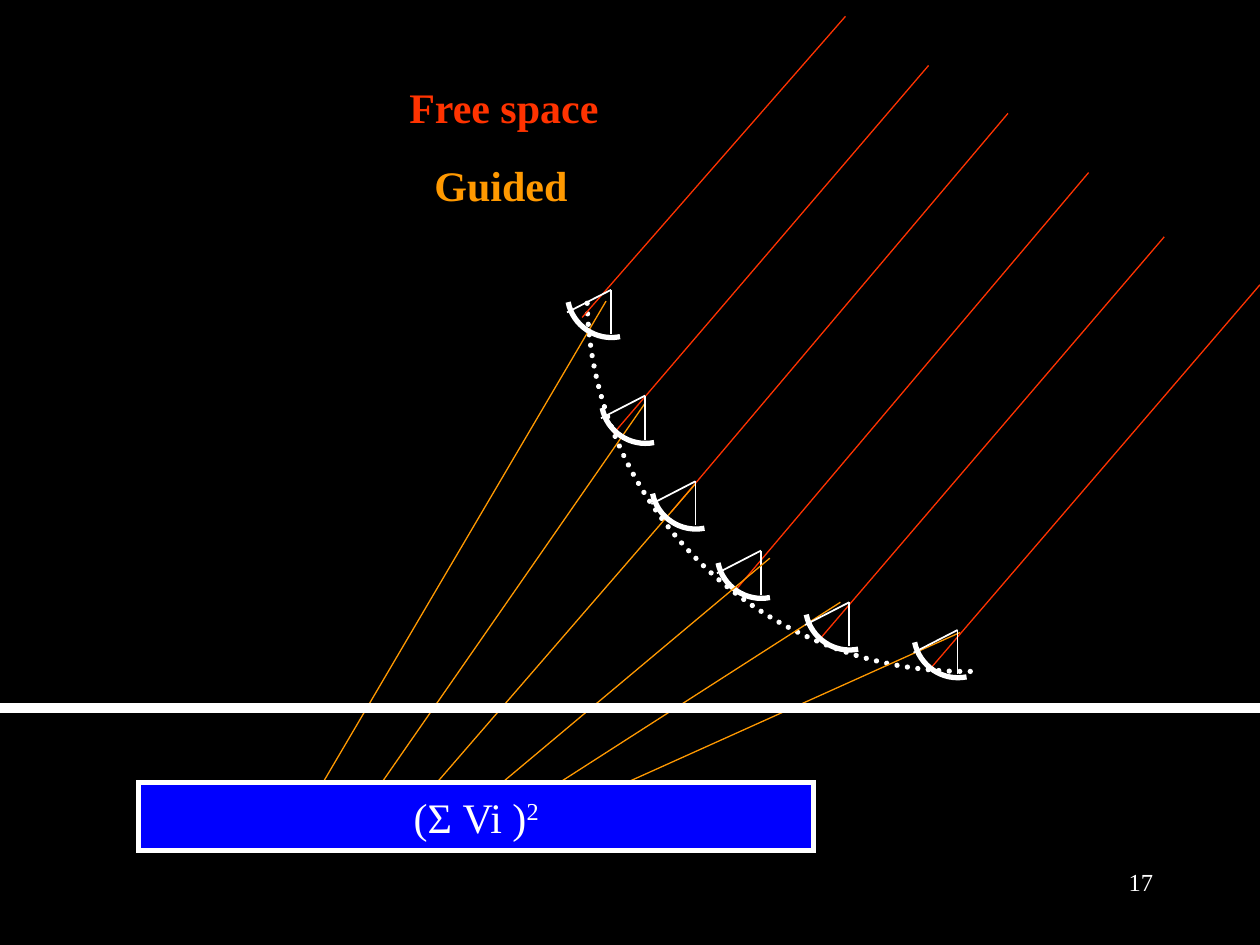
from lxml.etree import SubElement
from pptx import Presentation
from pptx.dml.color import RGBColor
from pptx.enum.dml import MSO_LINE_DASH_STYLE as Dash
from pptx.enum.shapes import MSO_CONNECTOR as Connector, MSO_SHAPE as Shape
from pptx.enum.text import MSO_ANCHOR as Anchor, PP_ALIGN as Align
from pptx.oxml.ns import qn
from pptx.util import Inches, Pt

# The slide is a grid of 10 columns by 7.5 rows, each one inch
COLUMNS, ROWS = 10, 7.5
CELL = Inches(1)
COLORS = {
    "background": "000000",
    "ink": "FFFFFF",
    "free": "FF3300",
    "guided": "FF9900",
    "detector": "0000FF",
}
FONT = "Times New Roman"
CURVE = 0.55  # handle length of a quarter circle, as a share of its radius

# Focus of each antenna: the one behind the guided rays, then those in front
BACK_FOCUS = (6.04, 4.37)
FRONT_FOCI = [(5.52, 3.82), (6.74, 4.78), (7.6, 5), (4.85, 2.3), (5.12, 3.14)]
FREE_RAYS = [((4.62, 2.52), (6.71, 0.13)), ((4.87, 3.44), (7.37, 0.52)),
             ((5.33, 4.06), (8, 0.9)), ((5.85, 4.67), (8.64, 1.37)),
             ((6.5, 5.08), (9.24, 1.88)), ((7.39, 5.3), (10, 2.26))]
GUIDED_RAYS = [((2.47, 6.37), (4.81, 2.39)), ((2.92, 6.37), (5.12, 3.2)),
               ((3.33, 6.37), (5.52, 3.84)), ((3.82, 6.35), (6.11, 4.43)),
               ((4.13, 6.41), (6.67, 4.78)), ((4.33, 6.5), (7.62, 5.02))]


def grid(*cells):
    return [round(cell * CELL) for cell in cells]


def rgb(name):
    return RGBColor.from_string(COLORS[name])


def set_line(line, color, width):
    line.color.rgb = rgb(color)
    line.width = Pt(width)


def add_line(shapes, start, end, color, width):
    link = shapes.add_connector(Connector.STRAIGHT, *grid(*start, *end))
    set_line(link.line, color, width)
    SubElement(link._element.spPr, qn("a:effectLst"))


def add_arc(shapes, box, rotation, from_top):
    """Quarter circle to the right side, from the box's top or bottom."""
    left, top, width, height = box
    start_y, end_y = (top, top + height) if from_top else (top + height, top)
    start, *curve = [
        grid(left, start_y),
        grid(left + width * CURVE, start_y),
        grid(left + width, end_y + (start_y - end_y) * CURVE),
        grid(left + width, end_y),
    ]
    outline = shapes.build_freeform(*start)
    outline.add_line_segments(curve, close=False)
    arc = outline.convert_to_shape()
    # Join the three segments into one Bézier curve
    segments = list(arc._element.iter(qn("a:lnTo")))
    bezier = SubElement(segments[0].getparent(), qn("a:cubicBezTo"))
    for segment in segments:
        bezier.append(segment[0])
        segment.getparent().remove(segment)
    arc.rotation = rotation
    arc.shadow.inherit = False
    arc.fill.background()
    set_line(arc.line, "ink", 3)
    return arc


def write(frame, runs, color, align=Align.LEFT, **font_format):
    paragraph = frame.paragraphs[0]
    paragraph.alignment = align
    for text, baseline in runs:
        run = paragraph.add_run()
        run.text = text
        run.font.color.rgb = rgb(color)
        for name, value in {"name": FONT, **font_format}.items():
            setattr(run.font, name, value)
        if baseline:
            run.font._element.set("baseline", str(baseline * 1000))


def add_label(shapes, box, text, color, wrap=False, **text_format):
    frame = shapes.add_textbox(*grid(*box)).text_frame
    frame.word_wrap = wrap
    write(frame, [(text, 0)], color, **text_format)


def add_rays(shapes, rays, color):
    for start, end in rays:
        add_line(shapes, start, end, color, 0.75)


def add_dish(slide, box):
    dish = add_arc(slide.shapes, box, 179.2, from_top=True)
    dish.line.dash_style = Dash.ROUND_DOT
    dish.line._get_or_add_ln().set("cap", "rnd")


def add_antenna(slide, focus):
    x, y = focus
    antenna = slide.shapes.add_group_shape().shapes
    add_arc(antenna, (x - 0.31, y + 0.06, 0.35, 0.35), 78.7, from_top=False)
    for edge in ((x - 0.35, y + 0.18), (x, y + 0.35)):
        add_line(antenna, focus, edge, "ink", 1)


def add_detector(slide, box):
    detector = slide.shapes.add_shape(Shape.RECTANGLE, *grid(*box))
    detector.shadow.inherit = False
    detector.fill.solid()
    detector.fill.fore_color.rgb = rgb("detector")
    set_line(detector.line, "ink", 3)
    SubElement(detector.line._get_or_add_ln(), qn("a:miter"), lim="800000")
    detector.text_frame.vertical_anchor = Anchor.MIDDLE
    write(detector.text_frame, [("(Σ Vi )", 0), ("2", 30)], "ink",
          Align.CENTER, size=Pt(24))


def add_legend(slide, box):
    left, top, width, row = box
    legend = slide.shapes.add_group_shape().shapes
    heading = {"size": Pt(24), "bold": True}
    add_label(legend, (left, top, width, 0.5), "Free space", "free", **heading)
    add_label(legend, (left + 0.2, top + row, width - 0.45, 0.5),
              "Guided", "guided", **heading)


def main():
    deck = Presentation()
    deck.slide_width, deck.slide_height = grid(COLUMNS, ROWS)
    slide = deck.slides.add_slide(deck.slide_layouts[6])
    slide.background.fill.solid()
    slide.background.fill.fore_color.rgb = rgb("background")

    # Slide number
    add_label(slide.shapes, (7.17, 6.83, 2.08, 0.5), "17", "ink", wrap=True,
              align=Align.RIGHT, size=Pt(14))

    # Dotted dish, rays and antennas
    add_dish(slide, (4.68, 2.35, 3, 3))
    add_rays(slide.shapes.add_group_shape().shapes, FREE_RAYS, "free")
    add_antenna(slide, BACK_FOCUS)
    add_rays(slide.shapes, GUIDED_RAYS, "guided")
    for focus in FRONT_FOCI:
        add_antenna(slide, focus)

    # Detector below the ground line
    add_detector(slide, (1.1, 6.21, 5.36, 0.54))
    add_line(slide.shapes, (0, 5.62), (COLUMNS, 5.62), "ink", 6)

    add_legend(slide, (3.15, 0.6, 1.71, 0.62))
    deck.save("out.pptx")


if __name__ == "__main__":
    main()
